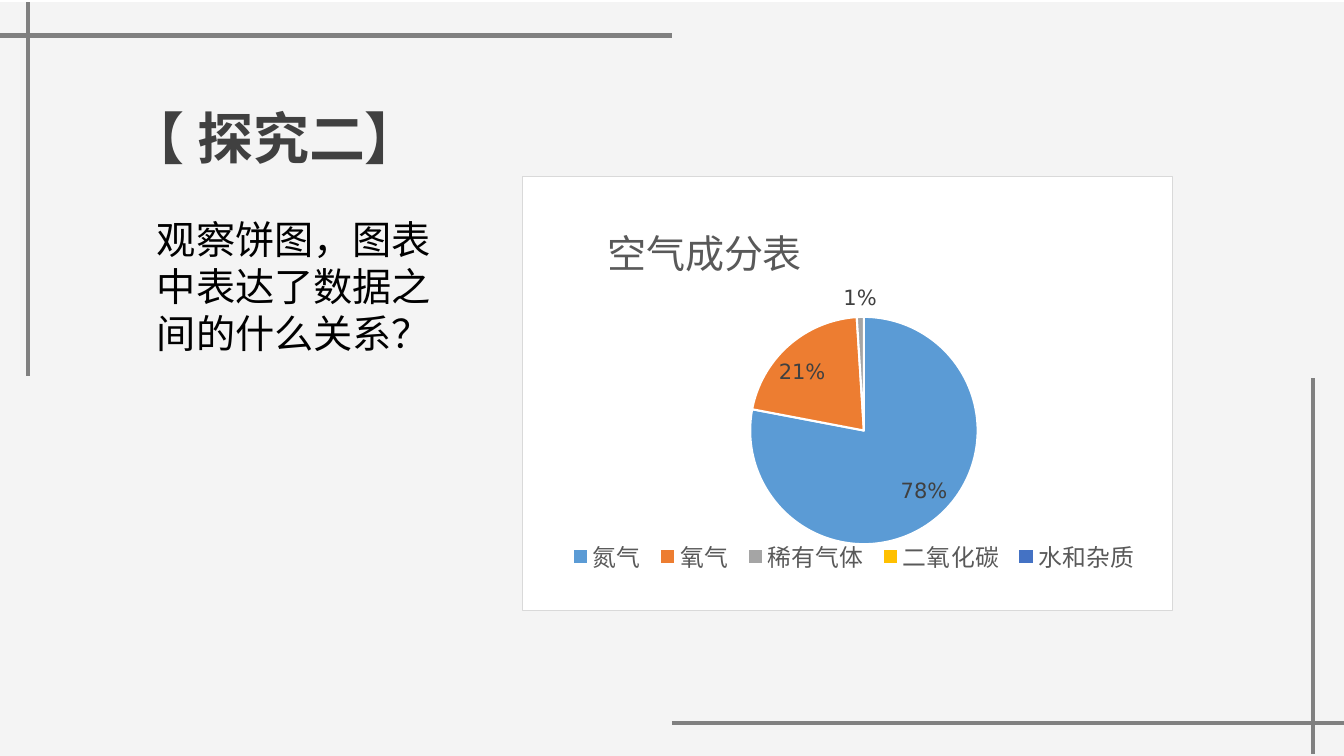
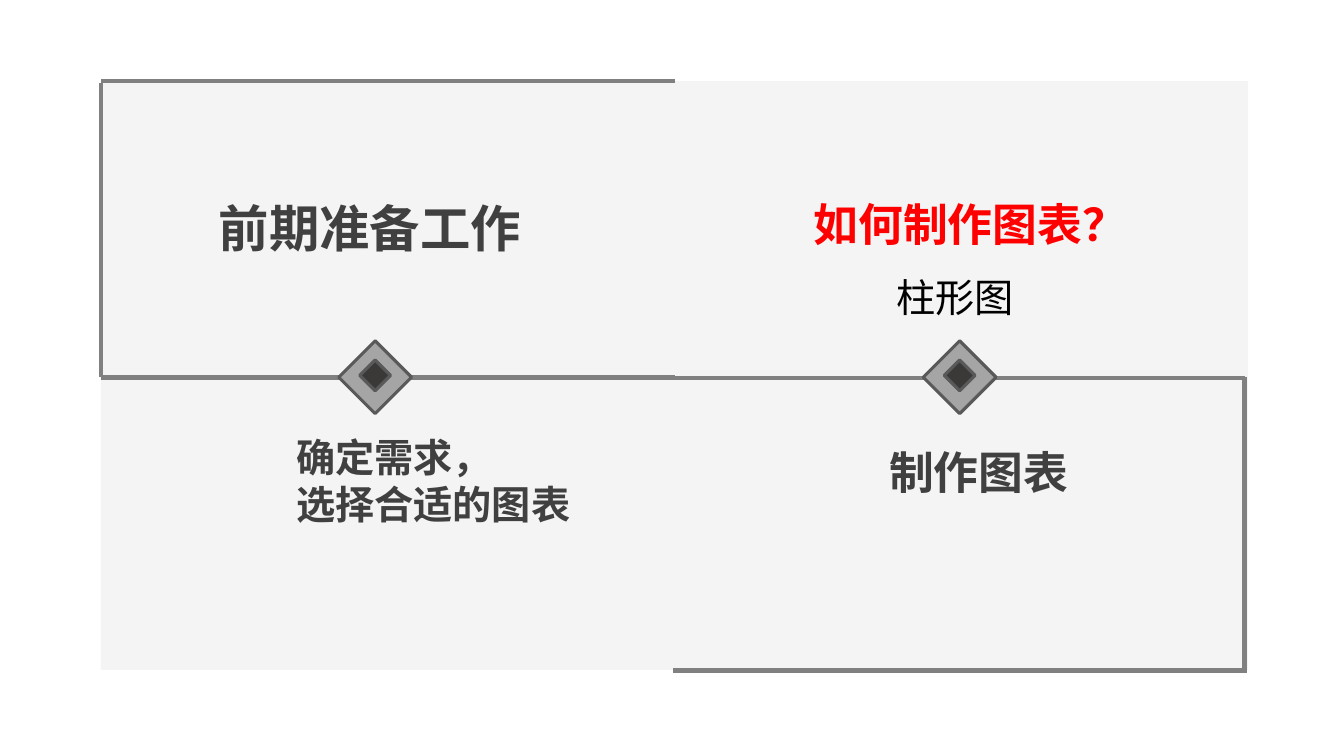
from lxml import etree
from pptx import Presentation
from pptx.chart.data import CategoryChartData
from pptx.dml.color import RGBColor
from pptx.enum.chart import XL_CHART_TYPE, XL_LABEL_POSITION, XL_LEGEND_POSITION
from pptx.enum.lang import MSO_LANGUAGE_ID
from pptx.enum.shapes import MSO_CONNECTOR, MSO_SHAPE
from pptx.enum.text import MSO_ANCHOR, MSO_AUTO_SIZE, PP_ALIGN
from pptx.oxml import parse_xml
from pptx.oxml.ns import nsdecls, qn
from pptx.util import Pt

PIE = XL_CHART_TYPE.PIE
BEST_FIT = XL_LABEL_POSITION.BEST_FIT
BOTTOM = XL_LEGEND_POSITION.BOTTOM
CHINESE = MSO_LANGUAGE_ID.SIMPLIFIED_CHINESE
STRAIGHT = MSO_CONNECTOR.STRAIGHT
RECTANGLE, DIAMOND = MSO_SHAPE.RECTANGLE, MSO_SHAPE.DIAMOND
TOP = MSO_ANCHOR.TOP
NO_AUTOFIT = MSO_AUTO_SIZE.NONE
LEFT, CENTER = PP_ALIGN.LEFT, PP_ALIGN.CENTER

FONT = "DejaVu Sans"
COLORS = {
    "panel": "F2F2F2", "frame": "808080", "heading": "404040",
    "body": "000000", "accent": "FF0000", "white": "FFFFFF",
    "chart_border": "D9D9D9", "chart_text": "595959",
    "diamond": "A5A5A5", "diamond_core": "3B3838", "diamond_line": "595959",
}

# Each text: wording, box (left, top, width, height), size, colour, bold, alignment
# Each line: x1, y1, x2, y2
SLIDES = [
    {
        "panel": (0, 1.5, 960, 538.5),
        "lines": [
            (20, 268.5, 20, 1.5), (480, 25.2, 0, 25.2),
            (938, 270, 938, 538.5), (480, 516.3, 960, 516.3),
        ],
        "title": ("【 探究二】", (78.5, 70, 235.5, 55.5), 40, "heading", True, CENTER),
        "texts": [
            ("观察饼图，图表中表达了数据之间的什么关系？",
             (105, 150.5, 214.5, 109), 28, "body", False, LEFT),
        ],
    },
    {
        "panel": (72, 58, 819.5, 420.5),
        "lines": [
            (72, 269, 72, 59), (482, 58, 72, 58),
            (889, 269, 889, 479), (481, 479, 890.5, 479),
            (482, 269.7, 72, 269.7), (479.5, 270, 889, 270),
        ],
        "title": ("前期准备工作", (149, 137, 237.5, 51), 36, "heading", True, LEFT),
        "texts": [
            ("确定需求，\n选择合适的图表",
             (204.5, 306, 237.5, 75), 28, "heading", True, LEFT),
            ("制作图表", (628, 314, 237.5, 46), 32, "heading", True, LEFT),
            ("如何制作图表？", (574, 137, 255, 46), 32, "accent", True, LEFT),
            ("柱形图", (633, 191.5, 119, 46), 28, "body", False, LEFT),
        ],
        "diamond_centers": [268, 685.5],
    },
]
DIAMOND_LAYERS = [(52, 269.5, "diamond"), (22, 268.2, "diamond_core")]

CHART_BOX = (373, 126, 465, 310.5)
CHART_TITLE = "空气成分表"
AIR_PARTS = [
    ("氮气", 0.78, "5B9BD5"), ("氧气", 0.21, "ED7D31"), ("稀有气体", 0.01, "A5A5A5"),
    ("二氧化碳", 0, "FFC000"), ("水和杂质", 0, "4472C4"),
]


def rgb(name):
    return RGBColor.from_string(COLORS[name])


def points(values):
    return [Pt(value) for value in values]


def style_font(font, size, color, bold=False):
    font.name, font.size, font.bold = FONT, Pt(size), bold
    font.color.rgb = rgb(color)


def add_filled_shape(slide, preset, box, color):
    shape = slide.shapes.add_shape(preset, *points(box))
    shape.shadow.inherit = False
    shape.fill.solid()
    shape.fill.fore_color.rgb = rgb(color)
    shape.line.fill.background()
    return shape


def add_panel(slide, box):
    panel = add_filled_shape(slide, RECTANGLE, box, "panel")
    color = panel.fill._xPr.find(".//" + qn("a:srgbClr"))
    etree.SubElement(color, qn("a:alpha"), val="79000")


def add_line(slide, ends):
    line = slide.shapes.add_connector(STRAIGHT, *points(ends))
    line.line.color.rgb = rgb("frame")
    line.line.width = Pt(3.25)
    etree.SubElement(line.element.spPr, qn("a:effectLst"))


def fill_text(shape, text, box, size, color, bold, alignment):
    shape.left, shape.top, shape.width, shape.height = points(box)
    frame = shape.text_frame
    frame.text = text
    frame.word_wrap = True
    frame.auto_size = NO_AUTOFIT
    frame.vertical_anchor = TOP
    for paragraph in frame.paragraphs:
        paragraph.alignment = alignment
        for run in paragraph.runs:
            style_font(run.font, size, color, bold)
            run.font.language_id = CHINESE


def add_diamond(slide, center_x):
    for size, center_y, color in DIAMOND_LAYERS:
        box = (center_x - size / 2, center_y - size / 2, size, size)
        diamond = add_filled_shape(slide, DIAMOND, box, color)
        diamond.line.color.rgb = rgb("diamond_line")
        diamond.line.width = Pt(2.25)


def place_chart_part(part, inner=False, **fractions):
    """Give a chart part a manual layout, as fractions of the chart area."""
    for old_layout in part.findall(qn("c:layout")):
        part.remove(old_layout)
    settings = {"layoutTarget": "inner"} if inner else {}
    settings.update(xMode="edge", yMode="edge", **fractions)
    layout = etree.Element(qn("c:layout"))
    manual = etree.SubElement(layout, qn("c:manualLayout"))
    for tag, value in settings.items():
        etree.SubElement(manual, qn("c:" + tag), val=str(value))
    overlay = part.find(qn("c:overlay"))
    if overlay is None:
        part.insert(0, layout)
    else:
        overlay.addprevious(layout)


def frame_chart(chart):
    """Give the chart area a white fill and a thin square border."""
    body = chart.element.find(qn("c:chart"))
    for old_corners in chart.element.findall(qn("c:roundedCorners")):
        chart.element.remove(old_corners)
    body.addprevious(parse_xml(f'<c:roundedCorners {nsdecls("c")} val="0"/>'))
    body.addnext(parse_xml(
        f'<c:spPr {nsdecls("c", "a")}>'
        f'<a:solidFill><a:srgbClr val="{COLORS["white"]}"/></a:solidFill>'
        f'<a:ln w="{Pt(0.75)}"><a:solidFill><a:srgbClr val="{COLORS["chart_border"]}"/>'
        '</a:solidFill></a:ln></c:spPr>'))


def add_air_chart(slide):
    names, values, colors = zip(*AIR_PARTS)
    data = CategoryChartData(number_format="0%")
    data.categories = names
    data.add_series("Series 1", values)
    chart = slide.shapes.add_chart(PIE, *points(CHART_BOX), data).chart
    style_font(chart.font, 15, "body")
    frame_chart(chart)

    chart.has_title = True
    title_frame = chart.chart_title.text_frame
    title_frame.text = CHART_TITLE
    title_run = title_frame.paragraphs[0].runs[0]
    style_font(title_run.font, 28, "chart_text")
    title_run.font.language_id = CHINESE
    place_chart_part(chart.chart_title._element, x=0.12, y=0.08)

    chart.has_legend = True
    chart.legend.position = BOTTOM
    chart.legend.include_in_layout = False
    style_font(chart.legend.font, 17, "chart_text")
    place_chart_part(chart.legend._element, x=0.06, y=0.83, w=0.9, h=0.09)

    plot = chart.plots[0]
    plot.vary_by_categories = True
    place_chart_part(chart.element.find(".//" + qn("c:plotArea")),
                     inner=True, x=0.35, y=0.32, w=0.35, h=0.53)
    for index, color in enumerate(colors):
        slice_format = plot.series[0].points[index].format
        slice_format.fill.solid()
        slice_format.fill.fore_color.rgb = RGBColor.from_string(color)
        slice_format.line.color.rgb = rgb("white")
        slice_format.line.width = Pt(1.5)

    labels = plot.series[0].data_labels
    labels.show_value = True
    labels.number_format = "0%"
    labels.number_format_is_linked = False
    labels.position = BEST_FIT
    style_font(labels.font, 15, "heading")
    leader = labels._element.find(qn("c:showLeaderLines"))
    if leader is None:
        leader = etree.SubElement(labels._element, qn("c:showLeaderLines"))
    leader.set("val", "1")


def add_framed_slide(presentation, content):
    slide = presentation.slides.add_slide(presentation.slide_layouts[5])
    add_panel(slide, content["panel"])
    for ends in content["lines"]:
        add_line(slide, ends)
    title = slide.shapes.title
    title.element.getparent().append(title.element)
    fill_text(title, *content["title"])
    for text, box, *style in content["texts"]:
        fill_text(slide.shapes.add_textbox(*points(box)), text, box, *style)
    for center_x in content.get("diamond_centers", []):
        add_diamond(slide, center_x)
    return slide


def main():
    presentation = Presentation()
    presentation.slide_width, presentation.slide_height = Pt(960), Pt(540)
    pie_slide, _ = [add_framed_slide(presentation, content) for content in SLIDES]
    add_air_chart(pie_slide)
    presentation.save("out.pptx")


if __name__ == "__main__":
    main()
